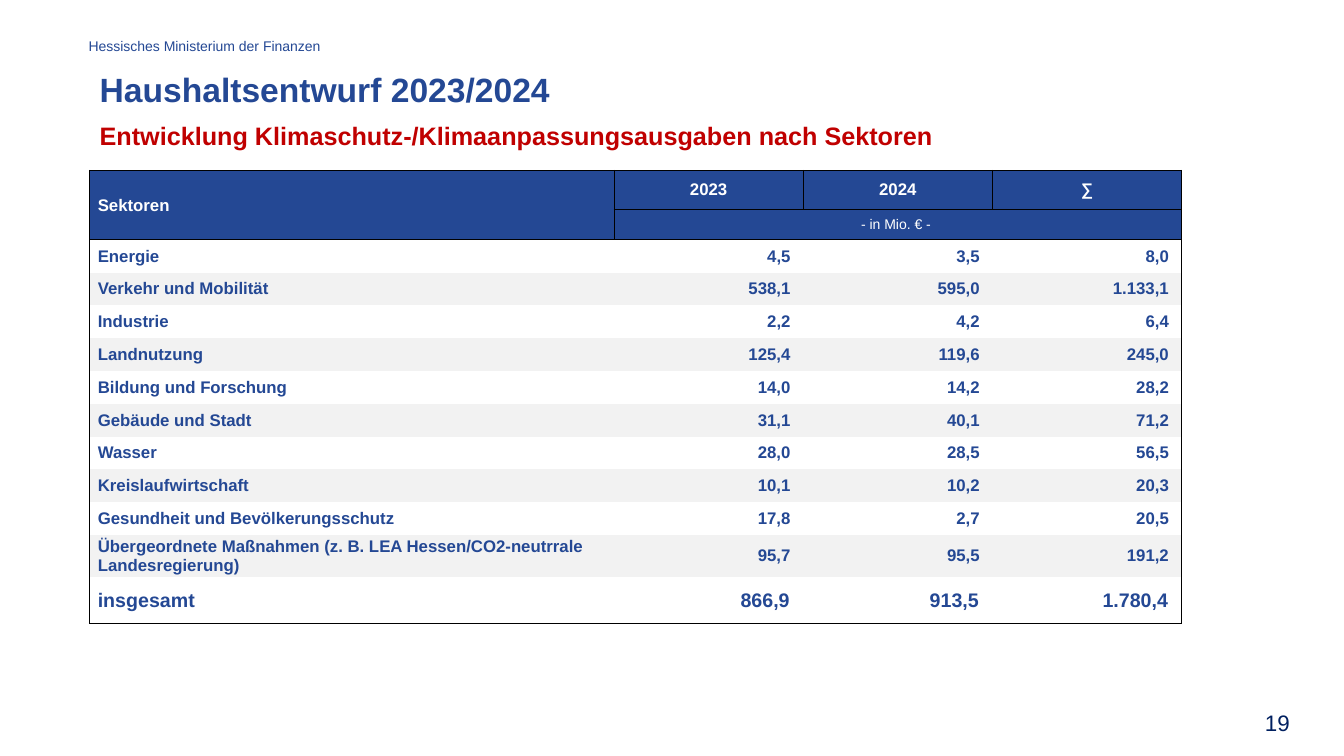
from lxml import etree
from pptx import Presentation
from pptx.dml.color import RGBColor
from pptx.enum import text
from pptx.oxml import ns
from pptx.util import Inches, Pt

BLUE = RGBColor(0x24, 0x48, 0x94)
NAVY = RGBColor(0x00, 0x20, 0x60)
RED = RGBColor(0xC0, 0x00, 0x00)
WHITE = RGBColor(0xFF, 0xFF, 0xFF)
GREY = RGBColor(0xF2, 0xF2, 0xF2)
BLACK = RGBColor(0x00, 0x00, 0x00)
FONT = "Arial"
NO_STYLE = "{2D5ABB26-0587-4C30-8999-92F81FD0307C}"
LEFT, CENTER, RIGHT = text.PP_ALIGN.LEFT, text.PP_ALIGN.CENTER, text.PP_ALIGN.RIGHT

YEARS = ["2023", "2024", "∑"]
SECTORS = [
    ("Energie", "4,5", "3,5", "8,0"),
    ("Verkehr und Mobilität", "538,1", "595,0", "1.133,1"),
    ("Industrie", "2,2", "4,2", "6,4"),
    ("Landnutzung", "125,4", "119,6", "245,0"),
    ("Bildung und Forschung", "14,0", "14,2", "28,2"),
    ("Gebäude und Stadt", "31,1", "40,1", "71,2"),
    ("Wasser", "28,0", "28,5", "56,5"),
    ("Kreislaufwirtschaft", "10,1", "10,2", "20,3"),
    ("Gesundheit und Bevölkerungsschutz", "17,8", "2,7", "20,5"),
    ("Übergeordnete Maßnahmen (z. B. LEA Hessen/CO2-neutrrale Landesregierung)",
     "95,7", "95,5", "191,2"),
    ("insgesamt", "866,9", "913,5", "1.780,4"),
]

# Table rows: spacer, two header rows, sectors with total, spacer
HEADER, UNIT, BODY = 1, 2, 3
TOTAL = BODY + len(SECTORS) - 1
END = TOTAL + 1
COLUMNS = 1 + len(YEARS)


def write(frame, content, size, color, bold=False, align=LEFT):
    frame.text = content
    paragraph = frame.paragraphs[0]
    paragraph.alignment = align
    font = paragraph.runs[0].font
    font.name, font.size, font.bold = FONT, Pt(size), bold
    font.color.rgb = color


def add_label(slide, box, content, size, color, bold=False, align=LEFT):
    shape = slide.shapes.add_textbox(*map(Inches, box))
    frame = shape.text_frame
    frame.word_wrap = True
    frame.vertical_anchor = text.MSO_ANCHOR.MIDDLE
    write(frame, content, size, color, bold, align)


def add_headings(slide, left, top):
    add_label(slide, (left - 0.11, top, 6.33, 0.27),
              "Hessisches Ministerium der Finanzen", 10, BLUE)
    add_label(slide, (left, top + 0.3, 7.77, 0.52),
              "Haushaltsentwurf 2023/2024", 24, BLUE, True)
    add_label(slide, (left, top + 0.83, 9.71, 0.39),
              "Entwicklung Klimaschutz-/Klimaanpassungsausgaben nach Sektoren",
              18, RED, True)


def horizontal_line(row, column):
    """Width of the line above a row, in points."""
    if row in (HEADER, BODY, END):
        return 1
    return 0.5 if row == UNIT and column > 0 else 0


def vertical_line(row, column):
    """Width of the line left of a column, in points."""
    if not HEADER <= row <= TOTAL:
        return 0
    if column in (0, COLUMNS):
        return 1
    return 0.5 if row == HEADER or (row == UNIT and column == 1) else 0


def add_borders(cell, row, column):
    properties = cell._tc.get_or_add_tcPr()
    widths = {
        "lnL": vertical_line(row, column),
        "lnR": vertical_line(row, column + cell.span_width),
        "lnT": horizontal_line(row, column),
        "lnB": horizontal_line(row + cell.span_height, column),
    }
    for side, width in widths.items():
        line = etree.SubElement(properties, ns.qn(f"a:{side}"), w=str(int(Pt(width))))
        if width:
            fill = etree.SubElement(line, ns.qn("a:solidFill"))
            etree.SubElement(fill, ns.qn("a:srgbClr"), val=str(BLACK))
        else:
            etree.SubElement(line, ns.qn("a:noFill"))


def fill_cell(cell, color):
    if color is None:
        cell.fill.background()
    else:
        cell.fill.solid()
        cell.fill.fore_color.rgb = color


def add_sector_table(slide, left, top, width, height):
    frame = slide.shapes.add_table(END + 1, COLUMNS, *map(Inches, (left, top, width, height)))
    table = frame.table
    table.first_row = table.horz_banding = False
    table._tbl.tblPr.find(ns.qn("a:tableStyleId")).text = NO_STYLE

    # Column widths and row heights: plain sector rows share what is left
    name_width = 5.2
    for column in range(COLUMNS):
        share = (width - name_width) / len(YEARS)
        table.columns[column].width = Inches(share if column else name_width)
    heights = {0: 0.15, HEADER: 0.39, UNIT: 0.3, TOTAL - 1: 0.42, TOTAL: 0.46, END: 0.14}
    sector_height = (height - sum(heights.values())) / (END + 1 - len(heights))
    for row in range(END + 1):
        table.rows[row].height = Inches(heights.get(row, sector_height))

    table.cell(HEADER, 0).merge(table.cell(UNIT, 0))
    table.cell(UNIT, 1).merge(table.cell(UNIT, COLUMNS - 1))

    # Margins, borders and fills
    for row in range(END + 1):
        for column in range(COLUMNS):
            cell = table.cell(row, column)
            framed = HEADER <= row <= TOTAL
            cell.margin_top = cell.margin_bottom = 0
            cell.margin_left = Inches(0.08 if framed and column == 0 else 0)
            cell.margin_right = Inches(0.08 if row >= BODY and column else 0)
            cell.vertical_anchor = text.MSO_ANCHOR.MIDDLE
            add_borders(cell, row, column)
            if row in (HEADER, UNIT):
                fill_cell(cell, BLUE)
            elif BODY <= row < TOTAL:
                fill_cell(cell, WHITE if (row - BODY) % 2 == 0 else GREY)
            else:
                fill_cell(cell, None)
            if not framed:
                paragraph = cell.text_frame.paragraphs[0]
                etree.SubElement(paragraph._p, ns.qn("a:endParaRPr"), sz="600")

    # Header texts
    write(table.cell(HEADER, 0).text_frame, "Sektoren", 12, WHITE, True)
    for column, year in enumerate(YEARS, 1):
        write(table.cell(HEADER, column).text_frame, year, 12, WHITE, True, CENTER)
    write(table.cell(UNIT, 1).text_frame, "- in Mio. € - ", 10, WHITE, False, CENTER)

    # Sector names and amounts
    for row, (name, *amounts) in enumerate(SECTORS, BODY):
        size = 14 if row == TOTAL else 12
        write(table.cell(row, 0).text_frame, name, size, BLUE, True)
        for column, amount in enumerate(amounts, 1):
            write(table.cell(row, column).text_frame, f"{amount} ", size, BLUE, True, RIGHT)


def main():
    presentation = Presentation()
    presentation.slide_width = Inches(13.33)
    presentation.slide_height = Inches(7.5)
    slide = presentation.slides.add_slide(presentation.slide_layouts[6])
    add_headings(slide, 0.89, 0.32)
    add_sector_table(slide, 0.89, 1.54, 10.83, 4.79)
    add_label(slide, (11.39, 7, 1.5, 0.33), "19", 16, NAVY, align=RIGHT)
    presentation.save("out.pptx")


if __name__ == "__main__":
    main()
